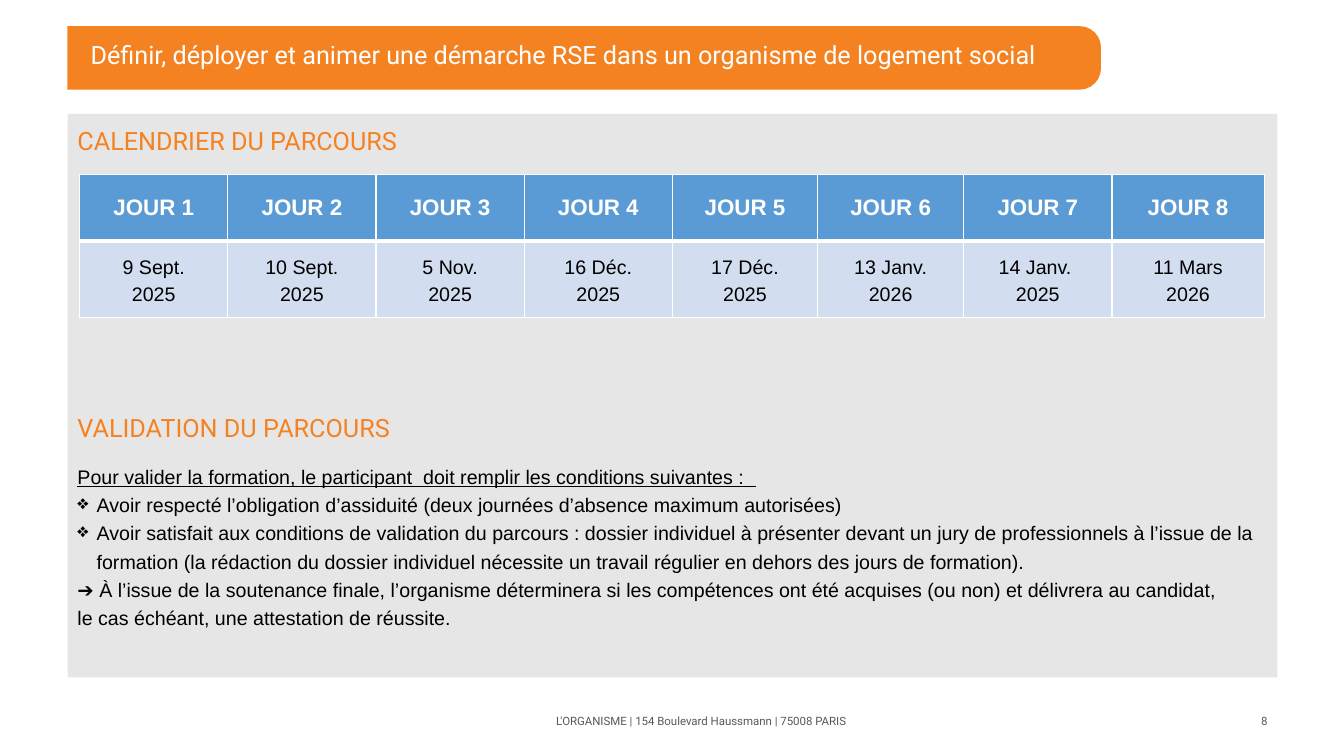
from lxml.etree import SubElement
from pptx import Presentation
from pptx.dml.color import RGBColor
from pptx.enum.shapes import MSO_SHAPE as Preset
from pptx.enum.text import MSO_ANCHOR as Anchor, PP_ALIGN as Align
from pptx.oxml.ns import qn
from pptx.util import Inches, Pt

ORANGE = RGBColor(0xF5, 0x82, 0x21)
WHITE = RGBColor(0xFF, 0xFF, 0xFF)
BLACK = RGBColor(0, 0, 0)
PANEL_GREY = RGBColor(0xE7, 0xE6, 0xE6)
FOOTER_GREY = RGBColor(0x58, 0x59, 0x5B)
HEADER_BLUE = RGBColor(0x5B, 0x9B, 0xD5)
DATE_BLUE = RGBColor(0xD2, 0xDE, 0xEF)

TITLE = "Définir, déployer et animer une démarche RSE dans un organisme de logement social"
CALENDAR_HEADING = "CALENDRIER DU PARCOURS"
VALIDATION_HEADING = "VALIDATION DU PARCOURS"
CONDITIONS_INTRO = "Pour valider la formation, le participant  doit remplir les conditions suivantes :  "
CONDITIONS = [
    "Avoir respecté l’obligation d’assiduité (deux journées d’absence maximum autorisées)",
    "Avoir satisfait aux conditions de validation du parcours : dossier individuel à présenter "
    "devant un jury de professionnels à l’issue de la formation (la rédaction du dossier "
    "individuel nécessite un travail régulier en dehors des jours de formation).",
]
CONCLUSION = [
    "➔ À l’issue de la soutenance finale, l’organisme déterminera si les compétences ont été "
    "acquises (ou non) et délivrera au candidat, ",
    "le cas échéant, une attestation de réussite.",
]
FOOTER = "L'ORGANISME | 154 Boulevard Haussmann | 75008 PARIS"
PAGE_NUMBER = "8"
DATES = [
    ("9 Sept.", "2025"), ("10 Sept.", "2025"), ("5 Nov.", "2025"), ("16 Déc.", "2025"),
    ("17 Déc.", "2025"), ("13 Janv.", "2026"), ("14 Janv. ", "2025"), ("11 Mars", "2026"),
]

MARGIN, CONTENT_WIDTH = 0.67, 12
FOOTER_TOP, FOOTER_HEIGHT = 6.95, 0.4
COLUMN_WIDTHS = [1.47] * 4 + [1.44, 1.45, 1.47, 1.51]
ROW_HEIGHTS = [0.66, 0.76]
BULLET_INDENT = Inches(0.19)


def add_block(slide, preset, box, color):
    shape = slide.shapes.add_shape(preset, *map(Inches, box))
    shape.shadow.inherit = False
    shape.fill.solid()
    shape.fill.fore_color.rgb = color
    shape.line.fill.background()
    return shape


def add_text_box(slide, box, anchor=Anchor.MIDDLE):
    frame = slide.shapes.add_textbox(*map(Inches, box)).text_frame
    frame.word_wrap = True
    frame.vertical_anchor = anchor
    return frame


def write(paragraph, lines, size, color, font="Arial", align=Align.LEFT, spacing=1.0,
          bold=False, underline=False):
    """Fill a paragraph with one run per line, separated by line breaks."""
    paragraph.alignment = align
    paragraph.line_spacing = spacing
    for index, line in enumerate(lines):
        if index:
            paragraph.add_line_break()
        run = paragraph.add_run()
        run.text = line
        run.font.name = font
        run.font.size = Pt(size)
        run.font.color.rgb = color
        run.font.bold = bold
        run.font.underline = underline


def write_heading(paragraph, text):
    write(paragraph, [text], 18, ORANGE, "Roboto", spacing=1.2)


def add_bullet(paragraph):
    properties = paragraph._p.get_or_add_pPr()
    properties.set("marL", str(BULLET_INDENT))
    properties.set("indent", str(-BULLET_INDENT))
    SubElement(properties, qn("a:buChar")).set("char", "❖")


def set_borders(cell, widths):
    """Draw white borders; widths maps a side (L, R, T, B) to points."""
    properties = cell._tc.get_or_add_tcPr()
    for index, (side, width) in enumerate(widths.items()):
        line = properties.makeelement(qn(f"a:ln{side}"), {"w": str(Pt(width))})
        fill = SubElement(line, qn("a:solidFill"))
        SubElement(fill, qn("a:srgbClr")).set("val", str(WHITE))
        properties.insert(index, line)


def add_banner(slide):
    banner = add_block(slide, Preset.ROUNDED_RECTANGLE, (0.09, 0.26, 10.83, 0.63), ORANGE)
    banner.adjustments[0] = 0.336
    add_block(slide, Preset.RECTANGLE, (0, 0.15, MARGIN, 0.88), WHITE)
    frame = add_text_box(slide, (0.8, 0.26, 9.9, 0.6))
    write(frame.paragraphs[0], [TITLE], 18, WHITE, "Roboto", spacing=0.9)


def add_panel(slide):
    panel = add_block(slide, Preset.RECTANGLE, (MARGIN, 1.13, CONTENT_WIDTH, 5.59), PANEL_GREY)
    panel.text_frame.vertical_anchor = Anchor.TOP
    write_heading(panel.text_frame.paragraphs[0], CALENDAR_HEADING)


def add_calendar(slide):
    box = (0.79, 1.73, sum(COLUMN_WIDTHS), sum(ROW_HEIGHTS))
    table = slide.shapes.add_table(2, len(DATES), *map(Inches, box)).table
    for row, height in zip(table.rows, ROW_HEIGHTS):
        row.height = Inches(height)
    for index, (width, date) in enumerate(zip(COLUMN_WIDTHS, DATES)):
        table.columns[index].width = Inches(width)
        header, day = table.cell(0, index), table.cell(1, index)
        for cell, color, top, bottom in ((header, HEADER_BLUE, 1, 3), (day, DATE_BLUE, 3, 1)):
            cell.fill.solid()
            cell.fill.fore_color.rgb = color
            cell.vertical_anchor = Anchor.MIDDLE
            set_borders(cell, {"L": 1, "R": 1, "T": top, "B": bottom})
        write(header.text_frame.paragraphs[0], [f"JOUR {index + 1}"], 16, WHITE,
              align=Align.CENTER, bold=True)
        write(day.text_frame.paragraphs[0], date, 14, BLACK, align=Align.CENTER, spacing=1.2)


def add_validation(slide):
    frame = add_text_box(slide, (MARGIN, 3.92, CONTENT_WIDTH, 2.58), Anchor.TOP)
    frame.margin_top = Inches(0.11)
    write_heading(frame.paragraphs[0], VALIDATION_HEADING)
    intro = frame.add_paragraph()
    intro.space_before = Pt(16)
    write(intro, [CONDITIONS_INTRO], 14, BLACK, align=Align.JUSTIFY, underline=True)
    for condition in CONDITIONS:
        paragraph = frame.add_paragraph()
        add_bullet(paragraph)
        write(paragraph, [condition], 14, BLACK, spacing=1.2)
    write(frame.add_paragraph(), CONCLUSION, 14, BLACK, spacing=1.2)


def add_footer(slide):
    for text, left, width, align in ((FOOTER, 4.42, 5.07, Align.CENTER),
                                     (PAGE_NUMBER, 9.67, 3, Align.RIGHT)):
        frame = add_text_box(slide, (left, FOOTER_TOP, width, FOOTER_HEIGHT))
        write(frame.paragraphs[0], [text], 8.2, FOOTER_GREY, "Roboto", align)


def main():
    presentation = Presentation()
    presentation.slide_width, presentation.slide_height = Inches(13.33), Inches(7.5)
    slide = presentation.slides.add_slide(presentation.slide_layouts[6])
    add_banner(slide)
    add_panel(slide)
    add_footer(slide)
    add_validation(slide)
    add_calendar(slide)
    presentation.save("out.pptx")


if __name__ == "__main__":
    main()
